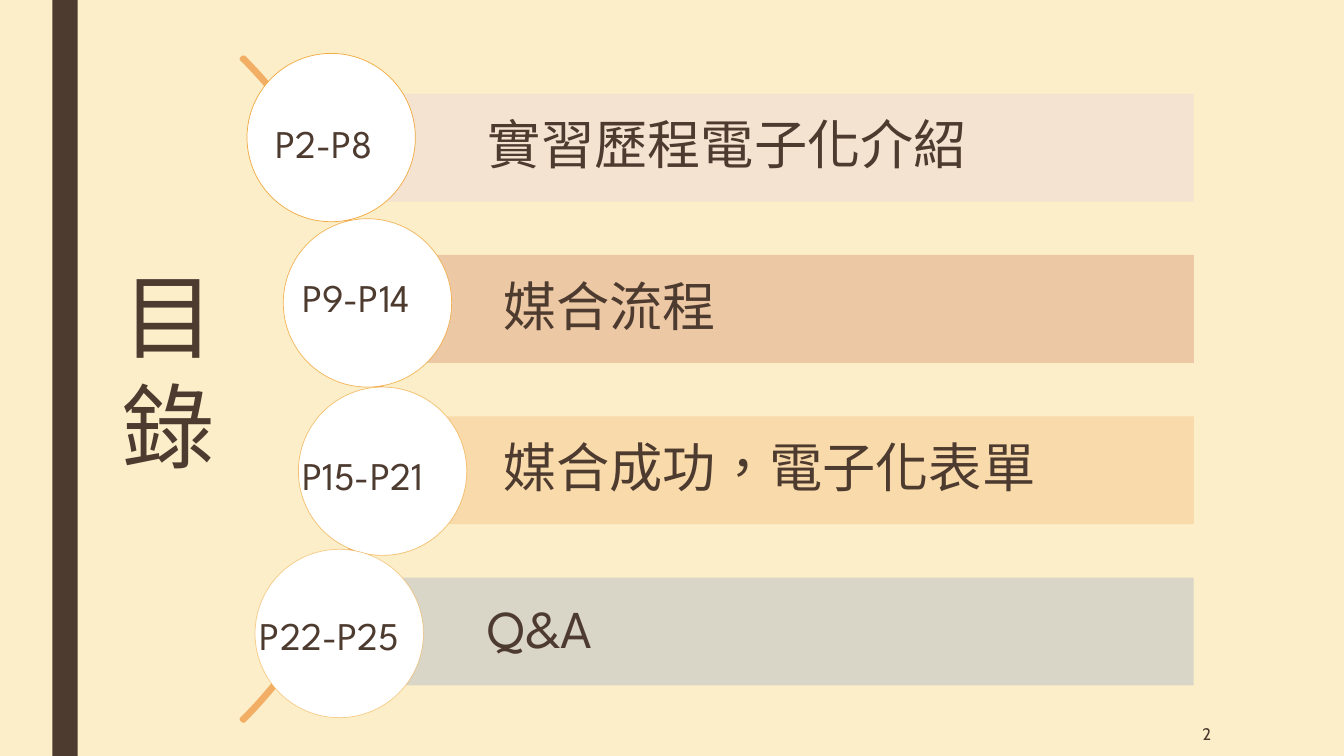
from lxml import etree
from pptx import Presentation
from pptx.dml.color import RGBColor
from pptx.enum.shapes import MSO_SHAPE as Shape
from pptx.enum.text import MSO_ANCHOR as Anchor, PP_ALIGN as Align
from pptx.oxml.ns import qn
from pptx.util import Inches, Pt

BROWN, CREAM, WHITE = "4E3B30", "FBEEC9", "FFFFFF"
ARC_COLOR, RING_COLOR = "F2AE65", "F0A22E"
HEADING_FONT, BODY_FONT = "League Spartan", "Cabin"

TITLE = ["目", "錄"]
PAGE_NUMBER = "2"
# heading, bar colour, bar left, text indent, circle left and top, ring opacity %
SECTIONS = [
    ("實習歷程電子化介紹", "F5E3D1", 3.08, 1.76, 2.45, 0.53, 90),
    ("媒合流程", "ECC8A4", 3.69, 1.30, 2.81, 2.17, 77),
    ("媒合成功，電子化表單", "F9DAAB", 3.69, 1.30, 2.96, 3.84, 63),
    ("Q&A", "D9D5C7", 3.08, 1.76, 2.53, 5.45, 50),
]
# page range, left, top, width
PAGE_RANGES = [
    ("P2-P8", 2.63, 1.17, 1.47),
    ("P9-P14", 2.90, 2.70, 1.79),
    ("P15-P21", 2.90, 4.47, 1.79),
    ("P22-P25", 2.48, 6.05, 1.79),
]
BAR_TOP, BAR_STEP, BAR_HEIGHT, BAR_RIGHT = 0.93, 1.6, 1.07, 11.84
CIRCLE_SIZE = 1.67


def color(value):
    return RGBColor.from_string(value)


def add_shape(slide, kind, box, fill=None, line=None, line_width=0.5, opacity=100):
    shape = slide.shapes.add_shape(kind, *map(Inches, box))
    shape.shadow.inherit = False
    if fill:
        shape.fill.solid()
        shape.fill.fore_color.rgb = color(fill)
    else:
        shape.fill.background()
    if not line:
        shape.line.fill.background()
        return shape
    shape.line.color.rgb = color(line)
    shape.line.width = Pt(line_width)
    if opacity < 100:
        line_color = shape.line._get_or_add_ln().find(".//" + qn("a:srgbClr"))
        etree.SubElement(line_color, qn("a:alpha"), val=str(opacity * 1000))
    return shape


def write(shape, lines, size, font=HEADING_FONT, align=Align.LEFT, anchor=Anchor.TOP,
          spacing=1.0, before=0, after=0, indent=0.1):
    frame = shape.text_frame
    frame.word_wrap = True
    frame.vertical_anchor = anchor
    frame.margin_left = Inches(indent)
    for index, line in enumerate(lines):
        paragraph = frame.add_paragraph() if index else frame.paragraphs[0]
        paragraph.alignment = align
        paragraph.line_spacing = spacing
        paragraph.space_before, paragraph.space_after = Pt(before), Pt(after)
        run = paragraph.add_run()
        run.text = line
        run.font.size = Pt(size)
        run.font.name = font
        run.font.color.rgb = color(BROWN)
        properties = run.font._element
        properties.set("lang", "zh-TW")
        latin = properties.find(qn("a:latin"))
        latin.addnext(etree.Element(qn("a:ea"), typeface=font))


def add_text(slide, box, lines, size, **text_format):
    write(slide.shapes.add_textbox(*map(Inches, box)), lines, size, **text_format)


def main():
    presentation = Presentation()
    presentation.slide_width, presentation.slide_height = Inches(13.33), Inches(7.5)
    slide = presentation.slides.add_slide(presentation.slide_layouts[6])
    slide.background.fill.solid()
    slide.background.fill.fore_color.rgb = color(CREAM)

    add_shape(slide, Shape.RECTANGLE, (0.52, 0, 0.25, 7.5), BROWN)
    add_text(slide, (10.36, 7.06, 1.75, 0.44), [PAGE_NUMBER], 12, font=BODY_FONT,
             align=Align.RIGHT, anchor=Anchor.MIDDLE)

    arc = add_shape(slide, Shape.BLOCK_ARC, (-5.54, -0.8, 9.32, 9.32),
                    line=ARC_COLOR, line_width=2.75)
    for index, value in enumerate((189, 27, 0.003)):
        arc.adjustments[index] = value
    arc.line._get_or_add_ln().set("cap", "rnd")

    for row, (heading, fill, left, indent, circle_left, circle_top, opacity) in enumerate(SECTIONS):
        box = (left, BAR_TOP + row * BAR_STEP, BAR_RIGHT - left, BAR_HEIGHT)
        bar = add_shape(slide, Shape.RECTANGLE, box, fill)
        write(bar, [heading], 38, anchor=Anchor.MIDDLE, spacing=0.9, indent=indent)
        add_shape(slide, Shape.OVAL, (circle_left, circle_top, CIRCLE_SIZE, CIRCLE_SIZE),
                  WHITE, RING_COLOR, opacity=opacity)

    add_text(slide, (1.12, 2.7, 1.31, 2.33), TITLE, 66, spacing=0.84, before=10, after=2)
    for pages, left, top, width in PAGE_RANGES:
        add_text(slide, (left, top, width, 0.4), [pages], 28, spacing=0.94, before=10, after=2)

    presentation.save("out.pptx")


if __name__ == "__main__":
    main()
